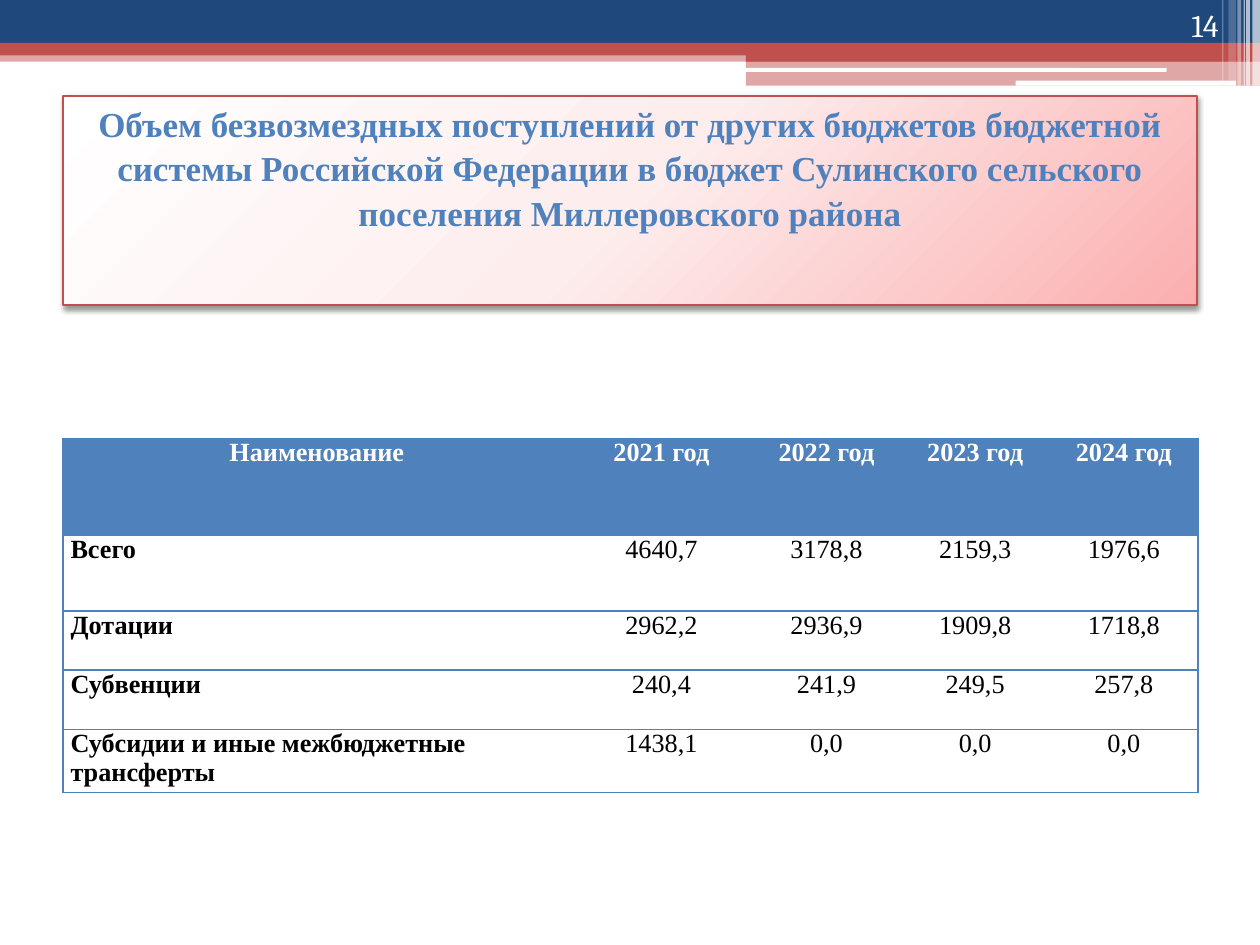
import copy
import dataclasses

import lxml.etree
import pptx
import pptx.dml.color
import pptx.enum.shapes
import pptx.enum.text
import pptx.oxml
import pptx.oxml.ns
import pptx.util
from pptx.util import Inches, Pt

COLORS = {
    "navy": "1F497D",
    "red": "C0504D",
    "blue": "4F81BD",
    "white": "FFFFFF",
    "black": "000000",
    "blush": "FDEDED",
    "pink": "FBAFAF",
}
SERIF = "Times New Roman"
SHAPES = pptx.enum.shapes.MSO_SHAPE
ALIGN = pptx.enum.text.PP_ALIGN
ANCHOR = pptx.enum.text.MSO_ANCHOR
NAMESPACE = pptx.oxml.ns.nsdecls("a")


@dataclasses.dataclass
class Bar:
    left: float
    top: float
    width: float
    height: float
    color: str
    opacity: int = 100
    rounded: bool = False


BARS = [
    Bar(0, 0.4, 10, 0.09, "red", 50),
    Bar(0, 0, 10, 0.34, "navy"),
    Bar(0, 0.34, 10, 0.1, "red"),
    Bar(5.92, 0.39, 4.08, 0.1, "red"),
    Bar(5.92, 0.48, 4.08, 0.2, "red", 50),
    Bar(5.91, 0.54, 3.35, 0.03, "white", rounded=True),
    Bar(8.06, 0.64, 1.75, 0.04, "white", rounded=True),
    Bar(9.94, 0, 0.06, 0.68, "white", 65),
    Bar(9.89, 0, 0.03, 0.68, "white", 65),
    Bar(9.87, 0, 0.01, 0.68, "white", 60),
    Bar(9.82, 0, 0.03, 0.68, "white", 40),
    Bar(9.75, 0, 0.06, 0.64, "white", 20),
    Bar(9.7, 0, 0.01, 0.64, "white", 30),
]
TITLE = (
    "Объем безвозмездных поступлений от других бюджетов бюджетной системы "
    "Российской Федерации в бюджет Сулинского сельского поселения Миллеровского района"
)
ROWS = [
    ["Наименование", "2021 год", "2022 год", "2023 год", "2024 год"],
    ["Всего", "4640,7", "3178,8", "2159,3", "1976,6"],
    ["Дотации", "2962,2", "2936,9", "1909,8", "1718,8"],
    ["Субвенции", "240,4", "241,9", "249,5", "257,8"],
    ["Субсидии и иные межбюджетные трансферты", "1438,1", "0,0", "0,0", "0,0"],
]
COLUMN_WIDTHS = [4.03, 1.44, 1.18, 1.18, 1.18]
ROW_HEIGHTS = [0.77, 0.6, 0.47, 0.47, 0.5]


def rgb(name: str) -> pptx.dml.color.RGBColor:
    return pptx.dml.color.RGBColor.from_string(COLORS[name])


def format_paragraph(paragraph, font_name: str, size: int, color: str, bold: bool, alignment) -> None:
    paragraph.alignment = alignment
    font = paragraph.font
    font.name, font.size, font.bold = font_name, Pt(size), bold
    font.color.rgb = rgb(color)


def draw_bar(slide, bar: Bar) -> None:
    preset = SHAPES.ROUNDED_RECTANGLE if bar.rounded else SHAPES.RECTANGLE
    shape = slide.shapes.add_shape(
        preset, Inches(bar.left), Inches(bar.top), Inches(bar.width), Inches(bar.height)
    )
    shape.shadow.inherit = False
    shape.line.fill.background()
    shape.fill.solid()
    shape.fill.fore_color.rgb = rgb(bar.color)
    if bar.opacity < 100:
        color = shape.fill._xPr.find(".//" + pptx.oxml.ns.qn("a:srgbClr"))
        alpha = lxml.etree.SubElement(color, pptx.oxml.ns.qn("a:alpha"))
        alpha.set("val", str(bar.opacity * 1000))


def fill_title_gradient(title) -> None:
    title.fill.gradient()
    title.fill.gradient_angle = 315
    stop_list = title.fill._xPr.find(".//" + pptx.oxml.ns.qn("a:gsLst"))
    stop_list.insert(1, copy.deepcopy(stop_list[0]))
    stops = zip(title.fill.gradient_stops, ["white", "blush", "pink"], [0, 0.5, 1])
    for stop, color, position in stops:
        stop.color.rgb = rgb(color)
        stop.position = position


def draw_title(slide) -> None:
    title = slide.shapes.title
    title.left, title.top, title.width, title.height = map(Inches, (0.5, 0.76, 9, 1.66))
    fill_title_gradient(title)
    title.line.color.rgb = rgb("red")
    title.line.width = Pt(1)
    title.shadow.inherit = False
    effects = title._element.spPr.find(pptx.oxml.ns.qn("a:effectLst"))
    effects.append(pptx.oxml.parse_xml(
        f'<a:outerShdw {NAMESPACE} blurRad="40000" dist="23000" dir="5400000" rotWithShape="0">'
        f'<a:srgbClr val="{COLORS["black"]}"><a:alpha val="40000"/></a:srgbClr></a:outerShdw>'
    ))
    frame = title.text_frame
    frame.text = TITLE
    frame.word_wrap = True
    frame.auto_size = pptx.enum.text.MSO_AUTO_SIZE.NONE
    frame.vertical_anchor = ANCHOR.TOP
    frame.margin_top = Inches(0.03)
    paragraph = frame.paragraphs[0]
    paragraph.line_spacing = 1.06
    format_paragraph(paragraph, SERIF, 20, "blue", True, ALIGN.CENTER)


def set_border(cell, side: str, visible: bool) -> None:
    fill = f'<a:solidFill><a:srgbClr val="{COLORS["blue"]}"/></a:solidFill>' if visible else "<a:noFill/>"
    cell._tc.get_or_add_tcPr().append(
        pptx.oxml.parse_xml(f'<a:ln{side} {NAMESPACE} w="12700">{fill}</a:ln{side}>')
    )


def format_cell(cell, text: str, row: int, column: int) -> None:
    header = row == 0
    cell.margin_left = cell.margin_right = Inches(0.06)
    cell.margin_top = cell.margin_bottom = 0
    set_border(cell, "L", column == 0)
    set_border(cell, "R", column == len(COLUMN_WIDTHS) - 1)
    set_border(cell, "T", True)
    set_border(cell, "B", True)
    if header:
        cell.fill.solid()
        cell.fill.fore_color.rgb = rgb("blue")
    else:
        cell.fill.background()
    cell.text = text
    format_paragraph(
        cell.text_frame.paragraphs[0], SERIF, 15,
        "white" if header else "black",
        header or column == 0,
        ALIGN.CENTER if header or column else ALIGN.LEFT,
    )


def draw_table(slide) -> None:
    table = slide.shapes.add_table(
        len(ROWS), len(COLUMN_WIDTHS), Inches(0.5), Inches(3.48),
        Inches(sum(COLUMN_WIDTHS)), Inches(sum(ROW_HEIGHTS)),
    ).table
    table.first_row = table.horz_banding = False
    for column, width in zip(table.columns, COLUMN_WIDTHS):
        column.width = Inches(width)
    for row, height in zip(table.rows, ROW_HEIGHTS):
        row.height = Inches(height)
    for row, texts in enumerate(ROWS):
        for column, text in enumerate(texts):
            format_cell(table.cell(row, column), text, row, column)


def draw_page_number(slide) -> None:
    box = slide.shapes.add_textbox(Inches(8.94), Inches(0), Inches(0.83), Inches(0.4))
    frame = box.text_frame
    frame.word_wrap = True
    frame.vertical_anchor = ANCHOR.BOTTOM
    frame.text = "14"
    format_paragraph(frame.paragraphs[0], "Cambria", 18, "white", False, ALIGN.RIGHT)


def main() -> None:
    presentation = pptx.Presentation()
    presentation.slide_width, presentation.slide_height = Inches(10), Inches(7.5)
    slide = presentation.slides.add_slide(presentation.slide_layouts.get_by_name("Title Only"))
    for bar in BARS:
        draw_bar(slide, bar)
    draw_title(slide)
    draw_table(slide)
    draw_page_number(slide)
    presentation.save("out.pptx")


if __name__ == "__main__":
    main()
